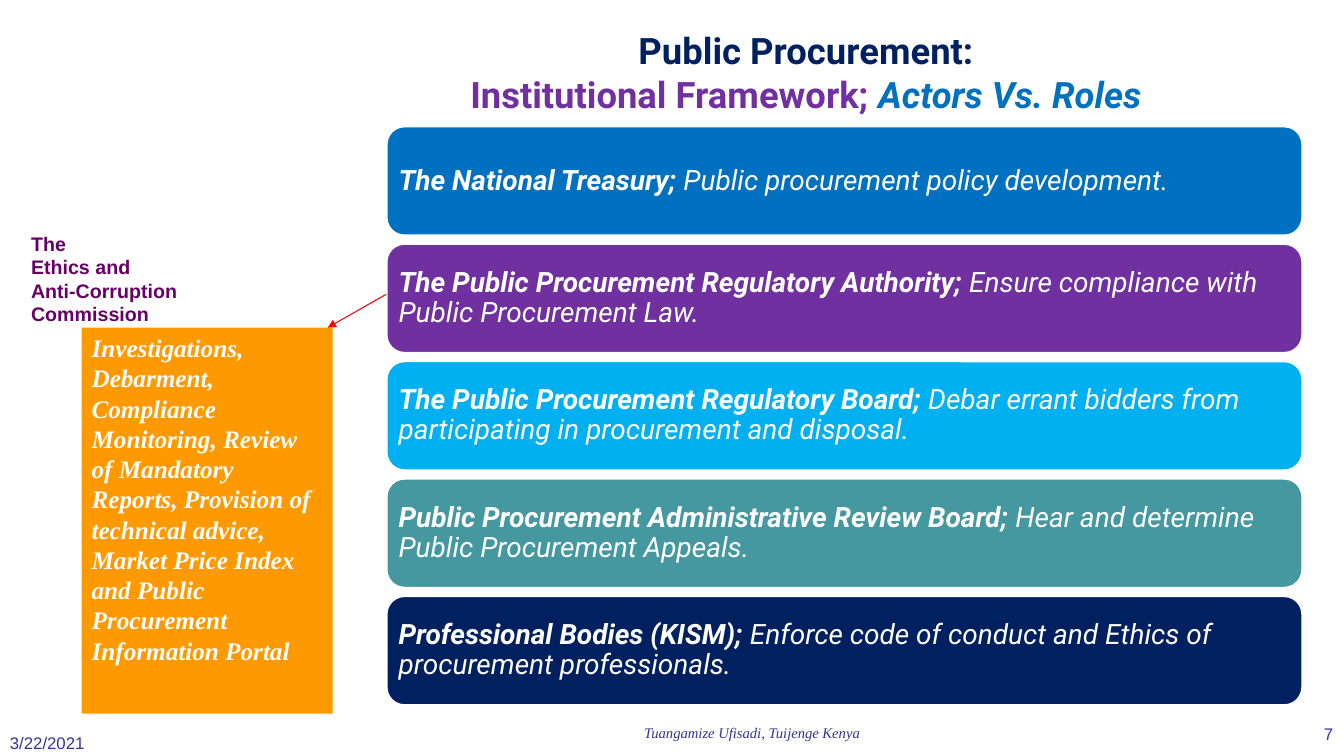
from dataclasses import dataclass

from lxml.etree import SubElement
from pptx import Presentation
from pptx.dml.color import RGBColor
from pptx.enum.shapes import MSO_CONNECTOR, MSO_SHAPE
from pptx.enum.text import MSO_ANCHOR, PP_ALIGN
from pptx.oxml.ns import qn
from pptx.shapes.autoshape import Shape
from pptx.util import Inches, Pt


@dataclass
class Span:
    text: str
    color: str
    bold: bool = False
    italic: bool = False


@dataclass
class Label:
    left: float
    top: float
    width: float
    height: float
    lines: list[list[Span]]
    font: str
    size: float
    align: PP_ALIGN = PP_ALIGN.LEFT
    anchor: MSO_ANCHOR = MSO_ANCHOR.TOP


@dataclass
class Actor:
    name: str
    role: str
    fill: str


def rgb(color: str) -> RGBColor:
    return RGBColor.from_string(color)


def write(shape: Shape, lines: list[list[Span]], font: str, size: float,
          align: PP_ALIGN = PP_ALIGN.LEFT, anchor: MSO_ANCHOR = MSO_ANCHOR.TOP,
          spacing: float = 1.0) -> None:
    frame = shape.text_frame
    frame.word_wrap = True
    frame.vertical_anchor = anchor
    frame.text = "\n".join("" for _ in lines)
    for para, spans in zip(frame.paragraphs, lines):
        para.alignment = align
        para.line_spacing = spacing
        for span in spans:
            run = para.add_run()
            run.text = span.text
            run.font.name = font
            run.font.size = Pt(size)
            run.font.bold = span.bold
            run.font.italic = span.italic
            run.font.color.rgb = rgb(span.color)


def add_label(page, label: Label) -> None:
    box = page.shapes.add_textbox(Inches(label.left), Inches(label.top),
                                  Inches(label.width), Inches(label.height))
    write(box, label.lines, label.font, label.size, label.align, label.anchor)


def add_block(page, kind: MSO_SHAPE, left: float, top: float, width: float,
              height: float, fill: str) -> Shape:
    block = page.shapes.add_shape(kind, Inches(left), Inches(top),
                                  Inches(width), Inches(height))
    block.shadow.inherit = False
    block.fill.solid()
    block.fill.fore_color.rgb = rgb(fill)
    block.line.fill.background()
    return block


def add_actor(page, actor: Actor, top: float) -> None:
    bar = add_block(page, MSO_SHAPE.ROUNDED_RECTANGLE, BAR_LEFT, top,
                    BAR_WIDTH, BAR_HEIGHT, actor.fill)
    bar.line.color.rgb = rgb(WHITE)
    bar.line.width = Pt(2)
    bar.text_frame.margin_left = bar.text_frame.margin_right = Inches(0.07)
    spans = [Span(actor.name + "; ", WHITE, True, True),
             Span(actor.role, WHITE, italic=True)]
    write(bar, [spans], "Roboto", 20, anchor=MSO_ANCHOR.MIDDLE, spacing=0.9)


def add_arrow(page, start: tuple[float, float], end: tuple[float, float]) -> None:
    arrow = page.shapes.add_connector(MSO_CONNECTOR.STRAIGHT,
                                      *map(Inches, start + end))
    arrow.line.color.rgb = rgb("FF0000")
    arrow.line.width = Pt(0.75)
    SubElement(arrow.line._get_or_add_ln(), qn("a:tailEnd"), type="triangle")
    SubElement(arrow._element.spPr, qn("a:effectLst"))


WHITE, NAVY, PURPLE, BLUE = "FFFFFF", "002060", "7030A0", "0070C0"
PLUM, INDIGO, ORANGE = "660066", "333399", "FF9900"
BAR_LEFT, BAR_WIDTH, BAR_HEIGHT = 3.83, 9.09, 1.09
BARS_TOP, BARS_BOTTOM = 1.25, 7.0

LABELS = [
    Label(0.21, 2.25, 2.4, 1.04,
          [[Span(line, PLUM, True)] for line in
           ("The", "Ethics and", "Anti-Corruption", "Commission")], "Arial", 14),
    Label(3.07, 0.18, 9.85, 1.07,
          [[Span("Public Procurement:", NAVY, True)],
           [Span("Institutional Framework; ", PURPLE, True),
            Span("Actors Vs. Roles", BLUE, True, True)]],
          "Roboto", 26, PP_ALIGN.CENTER, MSO_ANCHOR.MIDDLE),
    Label(0, 7.22, 2.84, 0.28, [[Span("3/22/2021", INDIGO)]], "Arial", 12),
    Label(12.29, 7.13, 1.03, 0.37, [[Span("7", INDIGO)]], "Arial", 12,
          PP_ALIGN.RIGHT),
    Label(4.86, 7.13, 5.2, 0.37,
          [[Span("Tuangamize Ufisadi, Tuijenge Kenya", INDIGO, italic=True)]],
          "Times New Roman", 10.5, PP_ALIGN.CENTER),
]

ACTORS = [
    Actor("The National Treasury", "Public procurement policy development.", BLUE),
    Actor("The Public Procurement Regulatory Authority",
          "Ensure compliance with Public Procurement Law.", PURPLE),
    Actor("The Public Procurement Regulatory Board",
          "Debar errant bidders from participating in procurement and disposal.",
          "00B0F0"),
    Actor("Public Procurement Administrative Review Board",
          "Hear and determine Public Procurement Appeals.", "4597A0"),
    Actor("Professional Bodies (KISM)",
          "Enforce code of conduct and Ethics of procurement professionals.", NAVY),
]

COMMISSION_ROLES = (
    "Investigations, Debarment, Compliance Monitoring, Review of Mandatory "
    "Reports, Provision of technical advice, Market Price Index and Public "
    "Procurement Information Portal")


def main() -> None:
    deck = Presentation()
    deck.slide_width, deck.slide_height = Inches(13.33), Inches(7.5)
    page = deck.slides.add_slide(deck.slide_layouts[6])

    # Title, commission name and footer
    for label in LABELS:
        add_label(page, label)

    # Actors and their roles, evenly stacked
    pitch = (BARS_BOTTOM - BARS_TOP - BAR_HEIGHT) / (len(ACTORS) - 1)
    for index, actor in enumerate(ACTORS):
        add_actor(page, actor, BARS_TOP + index * pitch)

    # Commission roles, linked to the regulatory authority
    roles = add_block(page, MSO_SHAPE.RECTANGLE, 0.81, 3.25, 2.49, 3.83, ORANGE)
    write(roles, [[Span(COMMISSION_ROLES, WHITE, True, True)]],
          "Times New Roman", 18)
    add_arrow(page, (BAR_LEFT, 2.92), (3.25, 3.25))

    deck.save("out.pptx")


if __name__ == "__main__":
    main()
